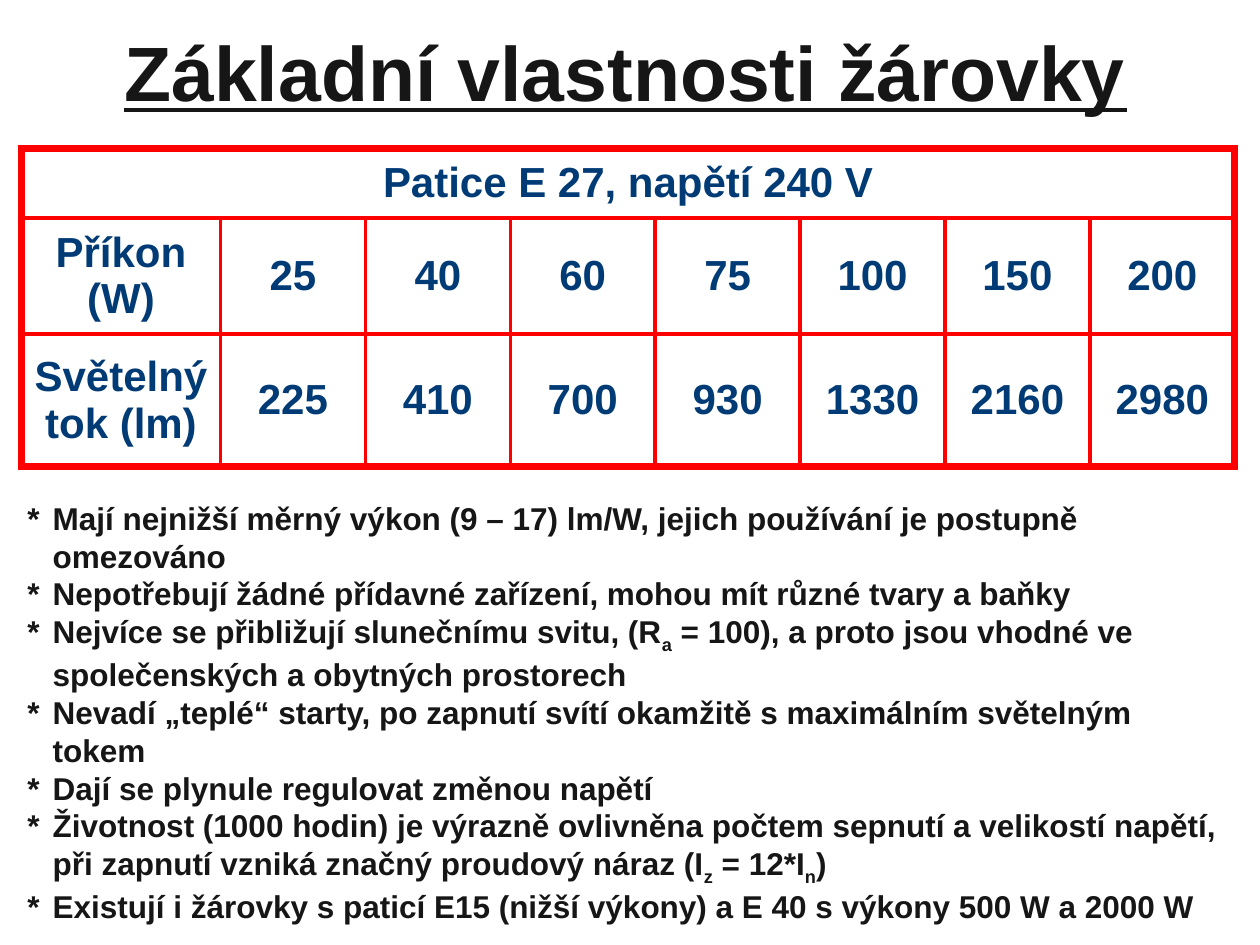
from dataclasses import dataclass

from lxml import etree
from pptx import Presentation
from pptx import util as u
from pptx.dml.color import RGBColor
from pptx.enum import text
from pptx.oxml.ns import qn


@dataclass(frozen=True)
class Theme:
    font: str = "Arial"
    ink: str = "161616"
    value: str = "003B76"
    rule: str = "FF0000"
    paper: str = "FFFFFF"
    title_pt: float = 44
    table_pt: float = 24
    body_pt: float = 18
    outer_pt: float = 4.5
    inner_pt: float = 2.25


T = Theme()
WIDTH, HEIGHT = u.Inches(10), u.Inches(7.5)
COLS = [15.8] + [11.5] * 7
ROWS = [7.33, 12.27, 14]
HEADING = "Patice E 27, napětí 240 V"
DATA = [
    ["Příkon (W)", "25", "40", "60", "75", "100", "150", "200"],
    ["Světelný tok (lm)", "225", "410", "700", "930", "1330", "2160", "2980"],
]
# Text between bars is set as a subscript.
PROPERTIES = [
    "Mají nejnižší měrný výkon (9 – 17) lm/W, jejich používání je postupně omezováno",
    "Nepotřebují žádné přídavné zařízení, mohou mít různé tvary a baňky",
    "Nejvíce se přibližují slunečnímu svitu, (R|a| = 100), a proto jsou vhodné ve "
    "společenských a obytných prostorech",
    "Nevadí „teplé“ starty, po zapnutí svítí okamžitě s maximálním světelným tokem",
    "Dají se plynule regulovat změnou napětí",
    "Životnost (1000 hodin) je výrazně ovlivněna počtem sepnutí a velikostí napětí, "
    "při zapnutí vzniká značný proudový náraz (I|z| = 12*I|n|)",
    "Existují i žárovky s paticí E15 (nižší výkony) a E 40 s výkony 500 W a 2000 W",
]


def across(percent):
    return u.Emu(round(WIDTH * percent / 100))


def down(percent):
    return u.Emu(round(HEIGHT * percent / 100))


def box(left, top, width, height):
    return across(left), down(top), across(width), down(height)


def write(p, content, size, color=T.ink, align=None, underline=None, hang=0):
    p.alignment = align
    if hang:
        pPr = p._p.get_or_add_pPr()
        pPr.set("marL", str(across(hang)))
        pPr.set("indent", str(-across(hang)))
    for i, part in enumerate(content.split("|")):
        r = p.add_run()
        r.text = part
        r.font.name = T.font
        r.font.size = u.Pt(size)
        r.font.bold = True
        r.font.underline = underline
        r.font.color.rgb = RGBColor.from_string(color)
        if i % 2:
            r._r.get_or_add_rPr().set("baseline", "-25000")


def add_text(s, area, paragraphs, anchor=text.MSO_ANCHOR.TOP, **fmt):
    tf = s.shapes.add_textbox(*area).text_frame
    tf.word_wrap = True
    tf.vertical_anchor = anchor
    for i, content in enumerate(paragraphs):
        write(tf.add_paragraph() if i else tf.paragraphs[0], content, **fmt)
    return tf


def set_borders(cell, outer):
    tcPr = cell._tc.get_or_add_tcPr()
    for i, side in enumerate("LRTB"):
        width = T.outer_pt if side in outer else T.inner_pt
        ln = etree.Element(qn(f"a:ln{side}"), w=str(u.Pt(width)))
        fill = etree.SubElement(ln, qn("a:solidFill"))
        etree.SubElement(fill, qn("a:srgbClr"), val=T.rule)
        tcPr.insert(i, ln)


def add_bulb_table(s, left, top):
    area = box(left, top, sum(COLS), sum(ROWS))
    frame = s.shapes.add_table(len(ROWS), len(COLS), *area)
    table = frame.table
    table.first_row = table.horz_banding = False
    for col, width in zip(table.columns, COLS):
        col.width = across(width)
    for row, height in zip(table.rows, ROWS):
        row.height = down(height)
    table.cell(0, 0).merge(table.cell(0, len(COLS) - 1))
    heading_row = [HEADING] + [""] * (len(COLS) - 1)
    for y, row in enumerate([heading_row, *DATA]):
        for x, content in enumerate(row):
            cell = table.cell(y, x)
            cell.fill.solid()
            cell.fill.fore_color.rgb = RGBColor.from_string(T.paper)
            cell.vertical_anchor = text.MSO_ANCHOR.MIDDLE
            edges = {"L": x == 0 or y == 0, "R": x == len(COLS) - 1 or y == 0,
                     "T": y == 0, "B": y == len(ROWS) - 1}
            set_borders(cell, [side for side, on in edges.items() if on])
            if content:
                write(cell.text_frame.paragraphs[0], content, T.table_pt,
                      color=T.value, align=text.PP_ALIGN.CENTER)


def main():
    prs = Presentation()
    prs.slide_width, prs.slide_height = WIDTH, HEIGHT
    s = prs.slides.add_slide(prs.slide_layouts[6])
    add_text(s, box(4.3, 1.73, 90.7, 11.6), ["Základní vlastnosti žárovky"],
             anchor=text.MSO_ANCHOR.MIDDLE, size=T.title_pt,
             align=text.PP_ALIGN.CENTER, underline=True)
    add_bulb_table(s, 1.7, 15.73)
    tf = add_text(s, box(1.2, 52.13, 97.6, 45.33),
                  [f"*\t{item}" for item in PROPERTIES], size=T.body_pt, hang=2)
    tf.auto_size = text.MSO_AUTO_SIZE.SHAPE_TO_FIT_TEXT
    prs.save("out.pptx")


if __name__ == "__main__":
    main()
